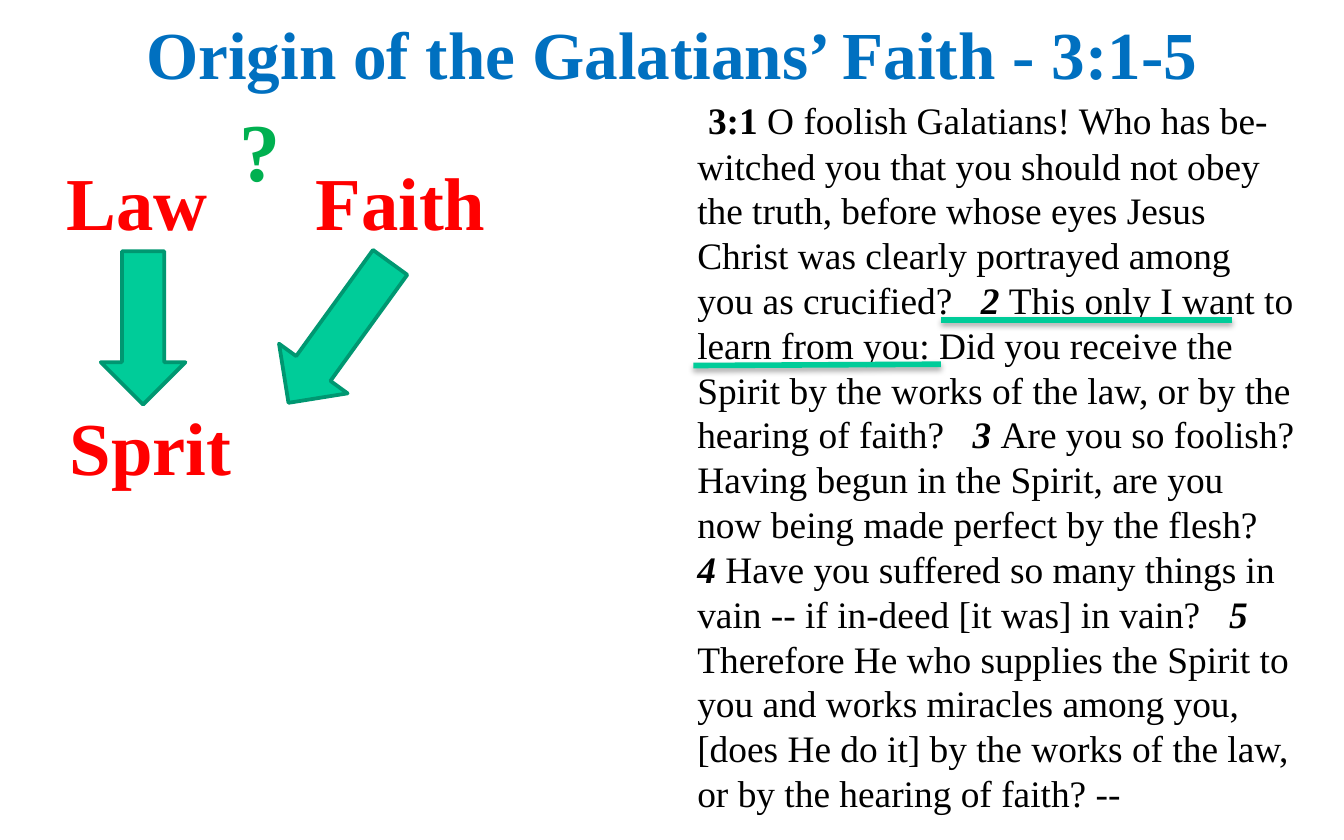
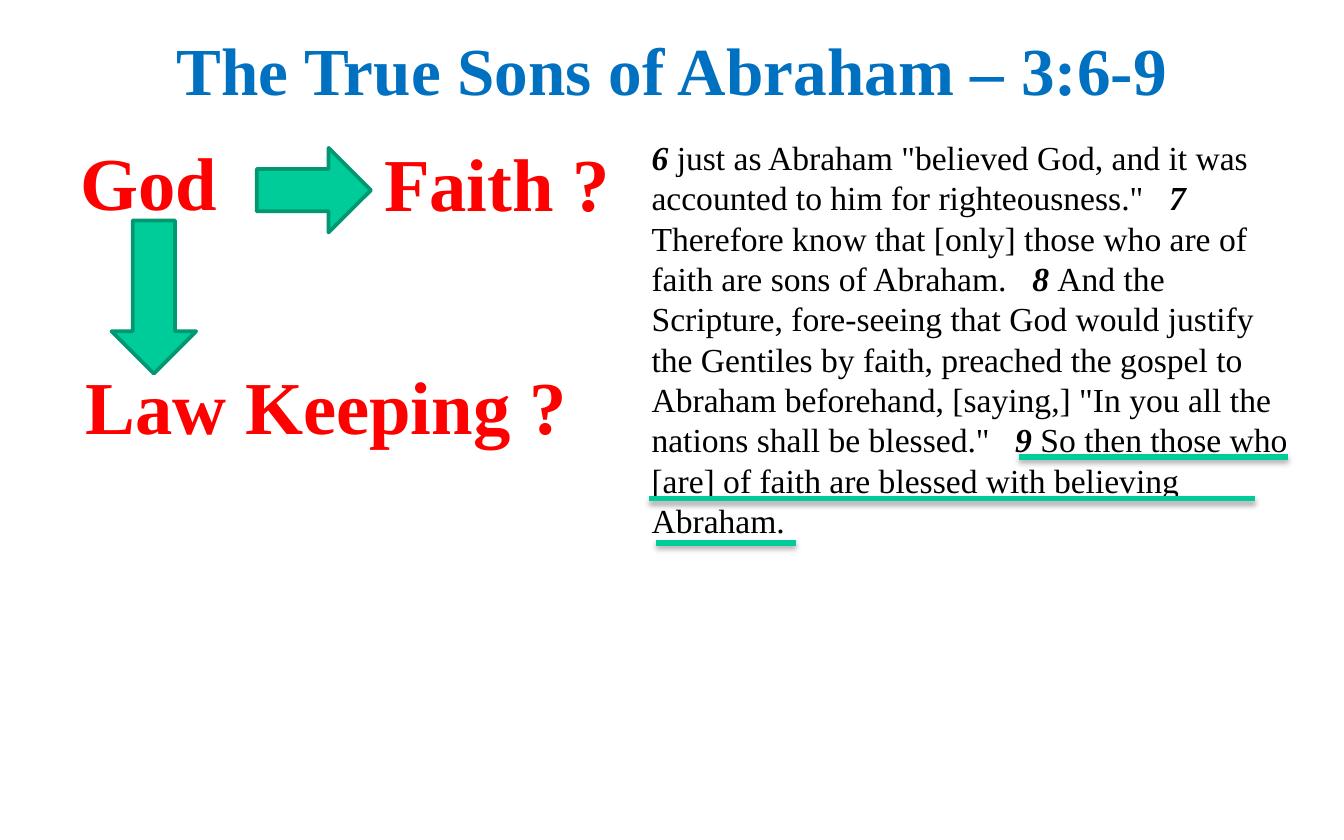
from dataclasses import dataclass

from lxml.etree import SubElement
from pptx import Presentation
from pptx.dml.color import RGBColor
from pptx.enum.shapes import MSO_CONNECTOR, MSO_SHAPE
from pptx.enum.text import MSO_ANCHOR, PP_ALIGN
from pptx.oxml.ns import qn
from pptx.slide import Slide
from pptx.text.text import Font, TextFrame
from pptx.util import Inches, Pt

FACE = "Times New Roman"
BLUE, RED, GREEN, BLACK = "0070C0", "FF0000", "00B050", "000000"
MINT, EDGE = "00CC99", "009771"
GAP = "   "


@dataclass
class Label:
    text: str
    left: float
    top: float
    width: float
    height: float = 0.77
    size: float = 40
    color: str = RED


@dataclass
class Arrow:
    left: float
    top: float
    height: float
    turn: float = 0
    width: float = 0.63


@dataclass
class Rule:
    """A line drawn under a phrase of the passage."""
    left: float
    right: float
    start: float
    end: float


@dataclass
class Verse:
    number: str
    text: str
    italic: bool = True


@dataclass
class Passage:
    left: float
    top: float
    width: float
    height: float
    size: float
    verses: list[Verse]
    lead: float = 0  # size of the space before the first verse


@dataclass
class Page:
    title: str
    top: float
    passage: Passage
    labels: list[Label]
    arrows: list[Arrow]
    rules: list[Rule]


def rgb(code: str) -> RGBColor:
    return RGBColor.from_string(code)


def style(font: Font, size: float, color: str, bold: bool) -> None:
    font.name, font.size, font.bold = FACE, Pt(size), bold
    font.color.rgb = rgb(color)


def add_box(slide: Slide, left: float, top: float,
            width: float, height: float) -> TextFrame:
    box = slide.shapes.add_textbox(
        Inches(left), Inches(top), Inches(width), Inches(height))
    box.text_frame.word_wrap = True
    return box.text_frame


def add_label(slide: Slide, label: Label) -> TextFrame:
    frame = add_box(slide, label.left, label.top, label.width, label.height)
    para = frame.paragraphs[0]
    para.text = label.text
    style(para.font, label.size, label.color, True)
    return frame


def add_title(slide: Slide, text: str, top: float) -> None:
    frame = add_label(slide, Label(text, 0.75, top, 8.5, 0.76, 36, BLUE))
    frame.vertical_anchor = MSO_ANCHOR.MIDDLE
    frame.paragraphs[0].alignment = PP_ALIGN.CENTER


def add_passage(slide: Slide, part: Passage) -> None:
    frame = add_box(slide, part.left, part.top, part.width, part.height)
    frame.margin_right = Inches(1 / 12)
    para = frame.paragraphs[0]
    style(para.font, part.size, BLACK, False)
    if part.lead:
        lead = para.add_run()
        lead.text = " "
        lead.font.size = Pt(part.lead)
    last = part.verses[-1]
    for verse in part.verses:
        mark = para.add_run()
        mark.text = verse.number + " "
        mark.font.bold, mark.font.italic = True, verse.italic
        para.add_run().text = verse.text + ("" if verse is last else GAP)


def add_arrow(slide: Slide, arrow: Arrow) -> None:
    shape = slide.shapes.add_shape(
        MSO_SHAPE.DOWN_ARROW, Inches(arrow.left), Inches(arrow.top),
        Inches(arrow.width), Inches(arrow.height))
    shape.rotation = arrow.turn
    shape.shadow.inherit = False
    shape.fill.solid()
    shape.fill.fore_color.rgb = rgb(MINT)
    shape.line.color.rgb = rgb(EDGE)
    shape.line.width = Pt(2)


def add_rule(slide: Slide, rule: Rule) -> None:
    line = slide.shapes.add_connector(
        MSO_CONNECTOR.STRAIGHT, Inches(rule.left), Inches(rule.start),
        Inches(rule.right), Inches(rule.end))
    line.line.color.rgb = rgb(MINT)
    line.line.width = Pt(3)
    effects = SubElement(line._element.spPr, qn("a:effectLst"))
    shade = SubElement(effects, qn("a:outerShdw"), blurRad=str(Pt(3.1)),
                       dist=str(Pt(1.8)), dir="5400000", rotWithShape="0")
    tint = SubElement(shade, qn("a:srgbClr"), val=BLACK)
    SubElement(tint, qn("a:alpha"), val="35000")


def add_page(slide: Slide, page: Page) -> None:
    add_title(slide, page.title, page.top)
    add_passage(slide, page.passage)
    for arrow in page.arrows:
        add_arrow(slide, arrow)
    for label in page.labels:
        add_label(slide, label)
    for rule in page.rules:
        add_rule(slide, rule)


ORIGIN = Page(
    "Origin of the Galatians’ Faith - 3:1-5", 0.01,
    Passage(5.09, 0.63, 4.64, 5.07, 20, [
        Verse("3:1", "O foolish Galatians! Who has be-witched you that you "
              "should not obey the truth, before whose eyes Jesus Christ was "
              "clearly portrayed among you as crucified?", False),
        Verse("2", "This only I want to learn from you: Did you receive the "
              "Spirit by the works of the law, or by the hearing of faith?"),
        Verse("3", "Are you so foolish? Having begun in the Spirit, are you "
              "now being made perfect by the flesh?"),
        Verse("4", "Have you suffered so many things in vain -- if in-deed "
              "[it was] in vain?"),
        Verse("5", "Therefore He who supplies the Spirit to you and works "
              "miracles among you, [does He do it] by the works of the law, "
              "or by the hearing of faith? --"),
    ], lead=23),
    [Label("Law", 0.4, 1.11, 1.33), Label("Sprit", 0.42, 2.93, 1.42),
     Label("Faith", 2.25, 1.11, 1.65),
     Label("?", 1.68, 0.69, 0.65, 0.84, 44, GREEN)],
    [Arrow(0.75, 1.87, 1.14), Arrow(2.21, 1.83, 1.29, 35.9)],
    [Rule(7, 9.17, 2.38, 2.38), Rule(5.16, 7, 2.72, 2.71)],
)

SONS = Page(
    "The True Sons of Abraham – 3:6-9", 0.13,
    Passage(4.75, 0.97, 5, 4.93, 18, [
        Verse("6", 'just as Abraham "believed God, and it was accounted to '
              'him for righteousness."'),
        Verse("7", "Therefore know that [only] those who are of faith are "
              "sons of Abraham."),
        Verse("8", "And the Scripture, fore-seeing that God would justify the "
              "Gentiles by faith, preached the gospel to Abraham beforehand, "
              '[saying,] "In you all the nations shall be blessed."'),
        Verse("9", "So then those who [are] of faith are blessed with "
              "believing Abraham."),
    ]),
    [Label("Faith ?", 2.76, 0.97, 2.07),
     Label("Law Keeping ?", 0.54, 2.63, 3.88),
     Label("God", 0.5, 0.96, 1.42)],
    [Arrow(0.83, 1.64, 1.14), Arrow(2.02, 0.99, 0.85, 270)],
    [Rule(4.83, 9.34, 3.71, 3.71), Rule(4.88, 5.92, 4.04, 4.04),
     Rule(7.58, 9.58, 3.4, 3.4)],
)


def main() -> None:
    deck = Presentation()
    deck.slide_width, deck.slide_height = Inches(10), Inches(6.25)
    for page in (ORIGIN, SONS):
        add_page(deck.slides.add_slide(deck.slide_layouts[6]), page)
    deck.save("out.pptx")


if __name__ == "__main__":
    main()
